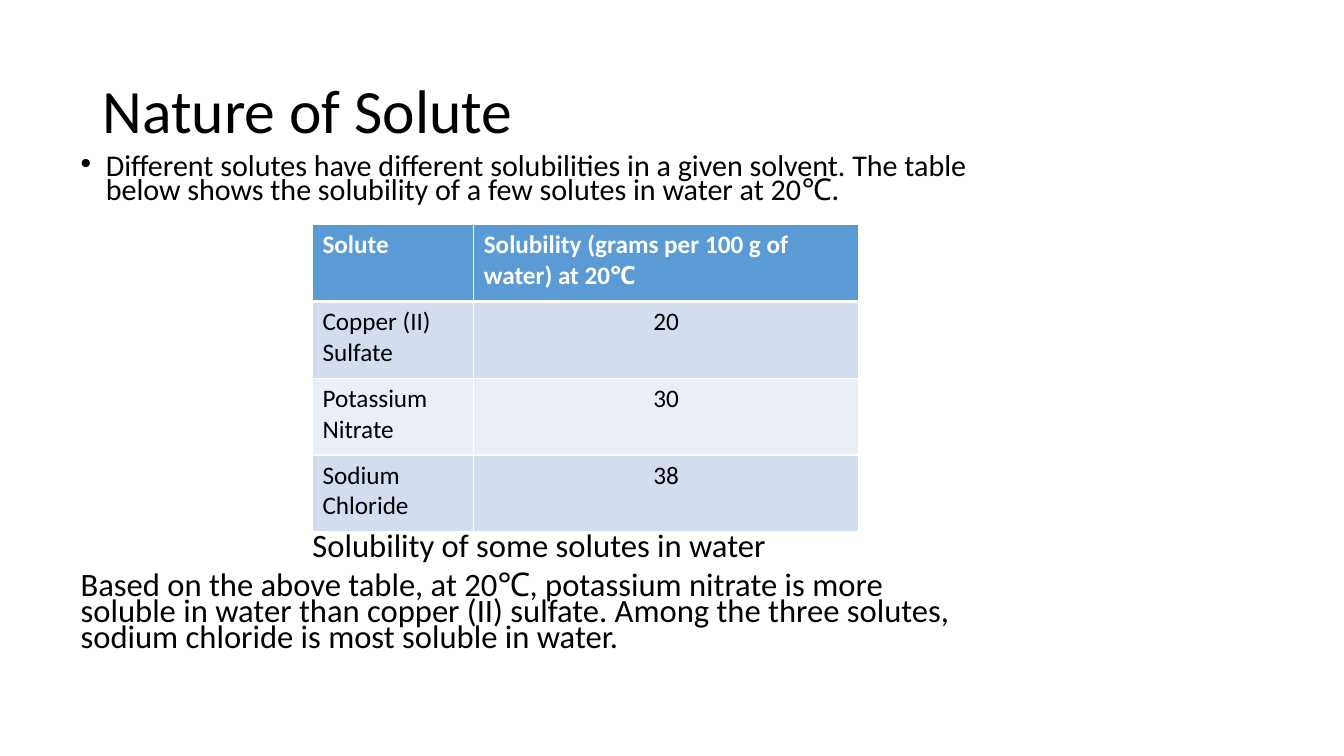
from lxml import etree
from pptx import Presentation
from pptx.dml.color import RGBColor
from pptx.enum.text import MSO_ANCHOR, PP_ALIGN
from pptx.oxml import ns
from pptx.util import Pt

BLACK, WHITE = "000000", "FFFFFF"
HEADER_FILL, BAND_FILLS = "5B9BD5", ("D2DEEF", "EAEFF7")
BODY_LEFT, TABLE_LEFT = 57.6, 223.2
SOLUBILITIES = [
    ("Solute", "Solubility (grams per 100 g of water) at 20℃"),
    ("Copper (II) Sulfate", "20"),
    ("Potassium Nitrate", "30"),
    ("Sodium Chloride", "38"),
]


def colour(hex_code):
    return RGBColor.from_string(hex_code)


def write(paragraph, words, size=18, font="Calibri", color=BLACK, bold=False,
          align=PP_ALIGN.LEFT, spacing=None):
    """Append a formatted run to a paragraph."""
    paragraph.alignment = align
    if spacing:
        paragraph.line_spacing = spacing
    run = paragraph.add_run()
    run.text = words
    run.font.size, run.font.name, run.font.bold = Pt(size), font, bold
    run.font.color.rgb = colour(color)


def add_bullet(paragraph, indent):
    properties = paragraph._p.get_or_add_pPr()
    properties.set("marL", str(Pt(indent)))
    properties.set("indent", str(-Pt(indent)))
    etree.SubElement(properties, ns.qn("a:buFont"), typeface="Arial")
    etree.SubElement(properties, ns.qn("a:buChar"), char="•")


def set_border(cell, side, width):
    line = etree.SubElement(cell._tc.get_or_add_tcPr(), ns.qn("a:" + side), w=str(Pt(width)))
    fill = etree.SubElement(line, ns.qn("a:solidFill"))
    etree.SubElement(fill, ns.qn("a:srgbClr"), val=WHITE)


def add_title(slide, left, top, width, height):
    title = slide.shapes.title
    title.left, title.top, title.width, title.height = map(Pt, (left, top, width, height))
    title.text_frame.vertical_anchor = MSO_ANCHOR.MIDDLE
    write(title.text_frame.paragraphs[0], "Nature of Solute", size=44, spacing=0.9)


def add_passage(slide, left, top, width, height, runs, bullet_indent=0, **style):
    """Place one paragraph made of (words, font) runs in a box without margins."""
    frame = slide.shapes.add_textbox(*map(Pt, (left, top, width, height))).text_frame
    frame.word_wrap = True
    frame.margin_left = frame.margin_right = frame.margin_top = frame.margin_bottom = 0
    paragraph = frame.paragraphs[0]
    for words, font in runs:
        write(paragraph, words, font=font, **style)
    if bullet_indent:
        add_bullet(paragraph, bullet_indent)


def add_solubility_table(slide, left, top, width, height, solute_width):
    table = slide.shapes.add_table(len(SOLUBILITIES), 2,
                                   *map(Pt, (left, top, width, height))).table
    table.columns[0].width = Pt(solute_width)
    table.columns[1].width = Pt(width - solute_width)
    for row, entries in enumerate(SOLUBILITIES):
        header = row == 0
        for column, words in enumerate(entries):
            cell = table.cell(row, column)
            centred = column == 1 and not header
            write(cell.text_frame.paragraphs[0], words, bold=header,
                  color=WHITE if header else BLACK,
                  align=PP_ALIGN.CENTER if centred else PP_ALIGN.LEFT)
            for side in ("lnL", "lnR", "lnT", "lnB"):
                under_header = (row, side) in ((0, "lnB"), (1, "lnT"))
                set_border(cell, side, 3 if under_header else 1)
            cell.fill.solid()
            cell.fill.fore_color.rgb = colour(HEADER_FILL if header else BAND_FILLS[(row - 1) % 2])


def main():
    deck = Presentation()
    deck.slide_width, deck.slide_height = Pt(960), Pt(540)
    slide = deck.slides.add_slide(deck.slide_layouts[5])
    add_title(slide, 66, 28.8, 828, 104.4)
    add_passage(slide, BODY_LEFT, 111.7, 650, 38,
                [("Different solutes have different solubilities in a given solvent. The table "
                  "below shows the solubility of a few solutes in water at 20", "Calibri"),
                 ("℃.", "Lato")],
                bullet_indent=18, size=21.5, spacing=0.68)
    add_solubility_table(slide, TABLE_LEFT, 160.6, 390, 219.2, solute_width=115.2)
    closing = {"size": 23.3, "spacing": 0.66}
    add_passage(slide, TABLE_LEFT, 383.4, 390, 20,
                [("Solubility of some solutes in water", "Calibri")], **closing)
    add_passage(slide, BODY_LEFT, 411.3, 630, 57,
                [("Based on the above table, at 20℃, potassium nitrate is more soluble in water "
                  "than copper (II) sulfate. Among the three solutes, sodium chloride is most "
                  "soluble in water.", "Calibri")], **closing)
    deck.save("out.pptx")


if __name__ == "__main__":
    main()
